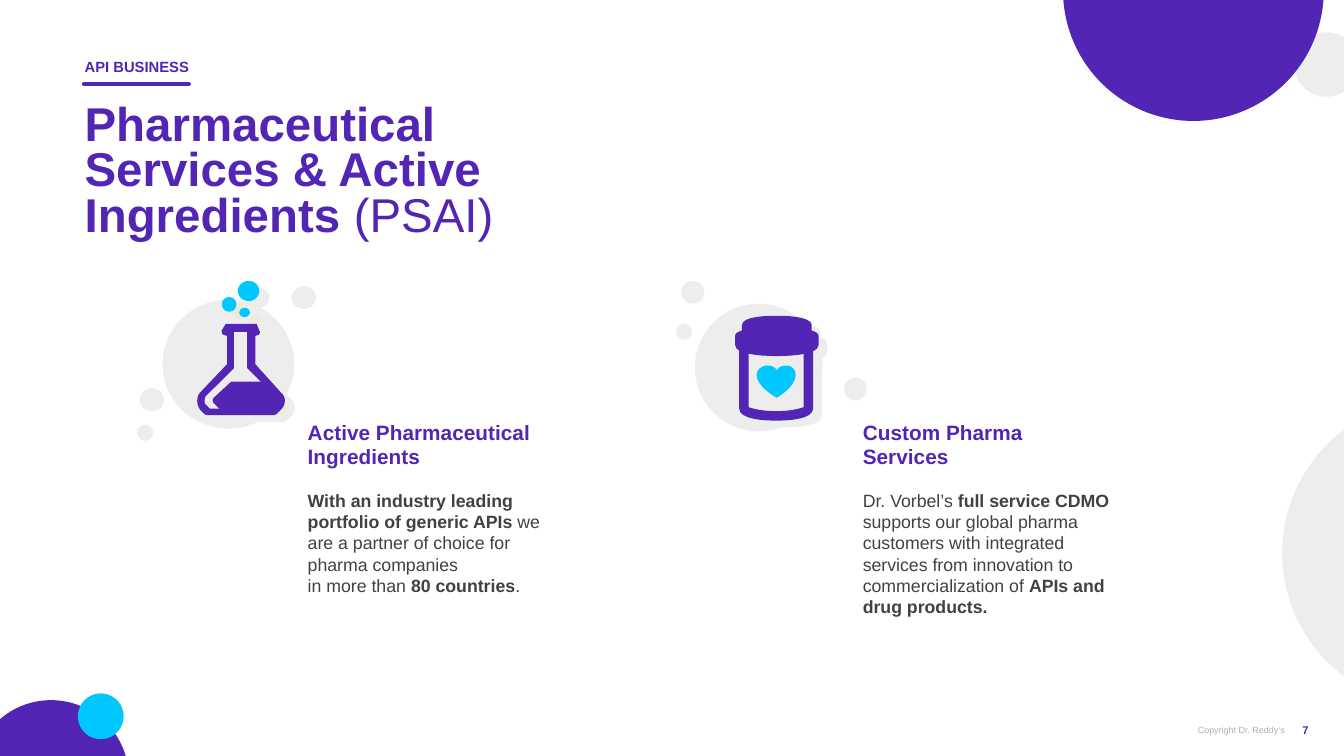
from pptx import Presentation, util as u
from pptx.dml.color import RGBColor
from pptx.enum import shapes as sh, text as tx
from pptx.oxml.ns import qn
from lxml import etree

PURPLE, CYAN, GREY, CREAM, INK = "5225B5", "00C8FF", "EDEDED", "EFEAD8", "414141"

deck = Presentation()
deck.slide_width, deck.slide_height = u.Inches(10), u.Inches(5.625)
cell = deck.slide_width / 100  # grid of 100 columns by 56.25 rows
slide = deck.slides.add_slide(deck.slide_layouts[5])
items = slide.shapes


def grid(*cells):
    return [u.Emu(round(n * cell)) for n in cells]


def hue(code):
    return RGBColor.from_string(code)


def paint(shape, code):
    shape.shadow.inherit = False
    shape.fill.solid()
    shape.fill.fore_color.rgb = hue(code)
    shape.line.fill.background()


def disc(x, y, w, code, h=None):
    paint(items.add_shape(sh.MSO_SHAPE.OVAL, *grid(x, y, w, h or w)), code)


def draw(loops, code, dx=0, dy=0):
    """Fill closed loops; a pair is a straight step, six numbers a Bezier curve."""
    pen = None
    for loop in loops:
        dots = [loop[0]]
        for step in loop[1:]:
            if len(step) == 2:
                dots.append(step)
                continue
            a, b, c, d = dots[-1], step[:2], step[2:4], step[4:]
            for t in [n / 8 for n in range(1, 9)]:
                s = 1 - t
                dots.append([s**3 * a[i] + 3 * s * s * t * b[i] + 3 * s * t * t * c[i]
                             + t**3 * d[i] for i in (0, 1)])
        dots = [grid(x + dx, y + dy) for x, y in dots]
        if pen is None:
            pen = items.build_freeform(*dots[0])
        else:
            pen.move_to(*dots[0])
        pen.add_line_segments(dots[1:], close=True)
    paint(pen.convert_to_shape(), code)


def write(frame, words, size, code=PURPLE, align=tx.PP_ALIGN.LEFT, lead=1.0,
          gap=0, anchor=tx.MSO_ANCHOR.TOP):
    """Add a paragraph; asterisks switch bold on and off."""
    frame.word_wrap = True
    frame.auto_size = tx.MSO_AUTO_SIZE.NONE
    frame.vertical_anchor = anchor
    frame.margin_left = frame.margin_right = frame.margin_top = frame.margin_bottom = 0
    para = frame.paragraphs[0]
    if para.runs:
        para = frame.add_paragraph()
    para.alignment, para.line_spacing = align, lead
    para.space_before, para.space_after = u.Pt(gap), u.Pt(0)
    for i, part in enumerate(words.split("*")):
        for j, line in enumerate(part.split("\n")):
            if j:
                para.add_line_break()
            if line:
                run = para.add_run()
                run.text = line
                run.font.name, run.font.size = "Arial", u.Pt(size)
                run.font.bold = i % 2 == 1
                run.font.color.rgb = hue(code)


def box(x, y, w, h):
    return items.add_textbox(*grid(x, y, w, h)).text_frame


# Heading
disc(96.3, 2.4, 4.8, GREY)
title = items.title
title.left, title.top, title.width, title.height = grid(6.3, 7.8, 37.5, 9.4)
write(title.text_frame, "*Pharmaceutical Services & Active Ingredients *(PSAI)", 25.4, lead=0.8)
middle = tx.MSO_ANCHOR.MIDDLE
write(box(6.3, 3.7, 9.4, 2.5), "*API BUSINESS*", 7.9, anchor=middle)
x, y, end = grid(6.25, 6.25, 14.05)
rule = items.add_connector(sh.MSO_CONNECTOR.STRAIGHT, x, y, end, y)
rule.line.color.rgb, rule.line.width = hue(PURPLE), u.Pt(2.25)
props = rule._element.spPr
props.find(qn("a:ln")).set("cap", "rnd")
etree.SubElement(props, qn("a:effectLst"))
disc(95.4, 29.7, 22.9, GREY)

# Two services
services = [
    (22.9, 17.6, "Active Pharmaceutical Ingredients",
     "*With an industry leading portfolio of generic APIs *we are a partner of choice "
     "for pharma companies \nin more than *80 countries*."),
    (64.2, 19.7, "Custom Pharma \nServices",
     "Dr. Vorbel’s *full service CDMO *supports our global pharma customers with "
     "integrated services from innovation to commercialization of *APIs and drug products.*"),
]
for x, wide, head, body in services:
    frame = box(x, 31.2, wide, 12)
    write(frame, f"*{head}*", 11.1)
    write(frame, body, 9.5, INK, gap=11)

# Jar
for x, y, w in [(51.7, 22.6, 9.5), (62.8, 28.1, 1.7), (50.3, 24.1, 1.2), (50.7, 20.9, 1.7)]:
    disc(x, y, w, GREY)
jar = [
    [(57.75, 31.3), (56.8, 31.3, 55, 31.2, 55, 30.4), (55, 25.9),
     (55, 25.2, 56.8, 25.1, 57.75, 25.1), (58.7, 25.1, 60.5, 25.2, 60.5, 25.9),
     (60.5, 30.4), (60.5, 31.2, 58.7, 31.3, 57.75, 31.3)],
    [(55.7, 30.3), (56, 30.4, 56.7, 30.6, 57.75, 30.6), (58.8, 30.6, 59.5, 30.4, 59.8, 30.3),
     (59.8, 26), (59.5, 25.9, 58.8, 25.8, 57.75, 25.8), (56.7, 25.8, 56, 25.9, 55.7, 26)],
]
lid = [[(60.4, 24.6), (60.4, 24.2), (60.4, 23.5, 58.2, 23.5, 57.8, 23.5),
        (57.3, 23.5, 55.2, 23.5, 55.2, 24.2), (55.2, 24.6), (54.9, 24.7, 54.7, 24.8, 54.7, 25),
        (54.7, 25.7), (54.7, 26.5, 57.5, 26.5, 57.8, 26.5), (58.1, 26.5, 60.9, 26.5, 60.9, 25.7),
        (60.9, 25), (60.9, 24.8, 60.7, 24.7, 60.4, 24.6)]]
heart = [[(58.5, 27.2), (58.2, 27.2, 57.9, 27.3, 57.8, 27.6), (57.7, 27.3, 57.4, 27.2, 57.1, 27.2),
          (56.7, 27.2, 56.3, 27.5, 56.3, 27.9), (56.3, 28.8, 57.8, 29.6, 57.8, 29.6),
          (57.8, 29.6, 59.2, 28.8, 59.2, 27.9), (59.2, 27.5, 58.9, 27.2, 58.5, 27.2)]]

# Flask
flask = [
    [(20.2, 30.9), (15.7, 30.9), (15.5, 30.9, 15.3, 30.9, 15.2, 30.8), (14.9, 30.5),
     (14.6, 30.1, 14.6, 29.5, 14.9, 29.2), (16.9, 27.1), (16.9, 25), (16.6, 24.9),
     (16.5, 24.8, 16.5, 24.7, 16.5, 24.6), (16.8, 24.1), (19.1, 24.1), (19.3, 24.6),
     (19.4, 24.7, 19.3, 24.8, 19.3, 24.9), (19, 25), (19, 27.1), (20.9, 29.2),
     (21.3, 29.5, 21.3, 30.1, 20.9, 30.5), (20.7, 30.7), (20.5, 30.9, 20.4, 30.9, 20.2, 30.9)],
    [(15.6, 30.4), (20.2, 30.4), (20.5, 30.1), (20.7, 30, 20.7, 29.7, 20.5, 29.5), (18.4, 27.4),
     (18.4, 24.7), (17.4, 24.7), (17.4, 27.4), (15.3, 29.5), (15.2, 29.7, 15.2, 30, 15.3, 30.1)],
]
liquid = [[(17.2, 28.4), (15.9, 29.6), (15.8, 29.7, 15.8, 29.9, 15.9, 30), (16.6, 30.7),
           (20.4, 30.7), (20.7, 30.3), (21, 30.1, 21, 29.6, 20.7, 29.3), (19.8, 28.4)]]
bubbles = [(16.5, 22.1, 1.1, CREAM, 1.1), (17.7, 20.9, 1.6, GREY, 1.5), (17.8, 22.9, 0.8, CREAM, 0.7)]

# Each icon is laid over its own offset shadow
for dx, dy, front in [(0.65, 0.5, False), (0, 0, True)]:
    for loops, code in [(jar, PURPLE), (lid, PURPLE), (heart, CYAN)]:
        draw(loops, code if front else GREY, dx, dy)

for x, y, w, h in [(12.1, 22.3, 9.8, 9.6), (21.7, 21.3, 1.8, 1.7), (10.2, 31.6, 1.2, 1.2),
                   (10.4, 28.9, 1.8, 1.7)]:
    disc(x, y, w, GREY, h)
for dx, dy, front in [(0.75, 0.5, False), (0, 0, True)]:
    draw(liquid, PURPLE if front else CREAM, dx, dy)
    draw(flask, PURPLE if front else GREY, dx, dy)
    for x, y, w, shade, h in bubbles:
        disc(x + dx, y + dy, w, CYAN if front else shade, h)

# Corners and footer
for x, y, w, code in [(-2, 52.1, 11.6, PURPLE), (5.8, 51.6, 3.4, CYAN), (79.1, -10.4, 19.4, PURPLE)]:
    disc(x, y, w, code)
write(box(82.5, 53.1, 13.3, 2.4), "Copyright Dr. Reddy‘s ", 4.8, "AFAFAF",
      align=tx.PP_ALIGN.RIGHT, anchor=middle)
write(box(96.9, 53.1, 1.9, 2.4), "*7*", 6, anchor=middle)

deck.save("out.pptx")
